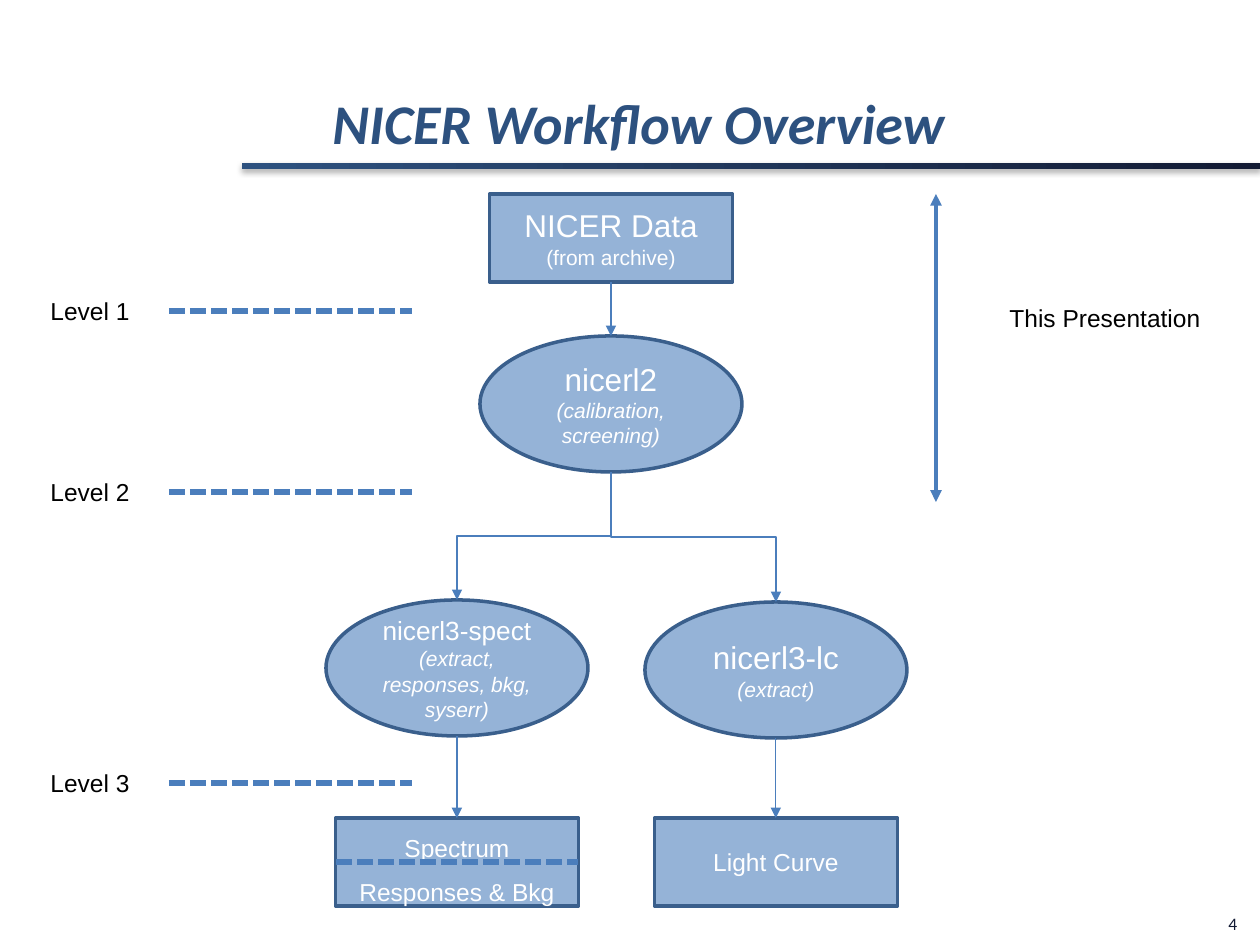
from lxml import etree
from pptx import Presentation, util as u
from pptx.dml.color import RGBColor
from pptx.enum import dml, shapes, text
from pptx.oxml import ns

EMU_PER_PX = 914400 / 126
NAVY = RGBColor(0x12, 0x1A, 0x33)
TITLE_BLUE = RGBColor(0x2D, 0x51, 0x7F)
NODE_FILL = RGBColor(0x95, 0xB3, 0xD7)
NODE_LINE = RGBColor(0x3A, 0x5F, 0x8C)
ARROW_BLUE = RGBColor(0x4B, 0x7E, 0xBC)
BLACK = RGBColor(0, 0, 0)
WHITE = RGBColor(0xFF, 0xFF, 0xFF)

RECTANGLE = shapes.MSO_SHAPE.RECTANGLE
OVAL = shapes.MSO_SHAPE.OVAL
STRAIGHT = shapes.MSO_CONNECTOR.STRAIGHT
ELBOW = shapes.MSO_CONNECTOR.ELBOW


def px(*lengths):
    return [u.Emu(round(length * EMU_PER_PX)) for length in lengths]


def child(parent, tag, **attributes):
    return etree.SubElement(parent, ns.qn(tag), attributes)


def write(paragraph, lines, color, font_name="Arial"):
    """Write (text, format) lines, parted by line breaks, in one paragraph."""
    for index, (words, formats) in enumerate(lines):
        if index:
            paragraph.add_line_break()
            size = lines[index - 1][1]["size"]
            child(paragraph._p[-1], "a:rPr", sz=str(size * 100))
        run = paragraph.add_run()
        run.text = words
        values = {"name": font_name, **formats, "size": u.Pt(formats["size"])}
        for name, value in values.items():
            setattr(run.font, name, value)
        run.font.color.rgb = color


def add_text(slide, box, words, color=BLACK, font_name="Arial", wrap=False,
             anchor=text.MSO_ANCHOR.TOP, **formats):
    frame = slide.shapes.add_textbox(*px(*box)).text_frame
    frame.word_wrap = wrap
    frame.vertical_anchor = anchor
    write(frame.paragraphs[0], [(words, {"size": 14, **formats})], color, font_name)


def add_node(slide, kind, center, top, lines, spacing=None):
    width, height = (243, 88) if kind == RECTANGLE else (262, 136)
    shape = slide.shapes.add_shape(kind, *px(center - width / 2, top, width, height))
    shape.shadow.inherit = False
    shape.fill.solid()
    shape.fill.fore_color.rgb = NODE_FILL
    shape.line.color.rgb = NODE_LINE
    shape.line.width = u.Pt(2)
    frame = shape.text_frame
    frame.word_wrap = True
    frame.vertical_anchor = text.MSO_ANCHOR.MIDDLE
    paragraph = frame.paragraphs[0]
    paragraph.alignment = text.PP_ALIGN.CENTER
    paragraph.line_spacing = spacing
    write(paragraph, lines, WHITE)


def add_line(slide, start, end, width, kind=STRAIGHT, dashed=False, arrows=()):
    connector = slide.shapes.add_connector(kind, *px(*start, *end))
    connector.line.color.rgb = ARROW_BLUE
    connector.line.width = u.Pt(width)
    if dashed:
        connector.line.dash_style = dml.MSO_LINE.SQUARE_DOT
    for arrow in arrows:
        child(connector.line._ln, arrow, type="triangle")
    child(connector.element.spPr, "a:effectLst")
    return connector


def add_down_elbow(slide, start, end):
    """Elbow that leaves downwards: a level elbow turned by a quarter."""
    (x1, y1), (x2, y2) = start, end
    middle_x, middle_y = (x1 + x2) / 2, (y1 + y2) / 2
    side = 1 if x2 < x1 else -1
    half_width, half_height = side * (y2 - y1) / 2, abs(x2 - x1) / 2
    connector = add_line(slide, (middle_x - half_width, middle_y - half_height),
                         (middle_x + half_width, middle_y + half_height),
                         0.75, ELBOW, arrows=["a:tailEnd"])
    connector.element.spPr.find(ns.qn("a:xfrm")).set(
        "rot", str((90 if side == 1 else 270) * 60000))


def build_header(slide, left, top, width):
    # Gradient rule with a soft shadow
    rule = slide.shapes.add_shape(RECTANGLE, *px(left, top + 89, width, 6))
    rule.fill.gradient()
    rule.fill.gradient_angle = 0
    for stop, color, position in zip(rule.fill.gradient_stops, (TITLE_BLUE, NAVY), (0, 1)):
        stop.color.rgb = color
        stop.position = position
    rule.line.fill.background()
    rule.shadow.inherit = False
    effects = rule.element.spPr.find(ns.qn("a:effectLst"))
    shadow = child(effects, "a:outerShdw", blurRad=str(u.Pt(3.1)), dist=str(u.Pt(1.8)),
                   dir="5400000", rotWithShape="0")
    child(child(shadow, "a:srgbClr", val="000000"), "a:alpha", val="35000")

    add_text(slide, (left + 78, top, 877, 88), "NICER Workflow Overview", TITLE_BLUE,
             "Calibri", True, text.MSO_ANCHOR.BOTTOM, size=32, bold=True, italic=True)


def build_workflow(slide, left, top):
    trunk, spectrum, curve = left + 285, left + 131, left + 450
    calibrate_top, spectrum_top, curve_top, product_top = (
        top + offset for offset in (142, 406, 408, 624))
    note = {"size": 12, "italic": True}

    # Processing steps and products
    add_node(slide, RECTANGLE, trunk, top,
             [("NICER Data", {"size": 18}), ("(from archive)", {"size": 12})])
    add_node(slide, OVAL, trunk, calibrate_top,
             [("nicerl2", {"size": 18}), ("(calibration, screening)", note)])
    add_node(slide, RECTANGLE, spectrum, product_top,
             [("Spectrum", {"size": 14}), ("Responses & Bkg", {"size": 14})], 1.5)
    add_node(slide, RECTANGLE, curve, product_top, [("Light Curve", {"size": 14})])
    add_node(slide, OVAL, spectrum, spectrum_top,
             [("nicerl3-spect", {"size": 15}), ("(extract, responses, bkg, syserr)", note)])
    add_node(slide, OVAL, curve, curve_top,
             [("nicerl3-lc", {"size": 18}), ("(extract)", note)])

    # Divider inside the spectrum product
    add_line(slide, (spectrum - 121, product_top + 44),
             (spectrum + 121, product_top + 44), 3, dashed=True)

    # Flow arrows
    add_line(slide, (trunk, top + 88), (trunk, calibrate_top), 0.75, arrows=["a:tailEnd"])
    for center, step_top in ((spectrum, spectrum_top), (curve, curve_top)):
        add_down_elbow(slide, (trunk, calibrate_top + 136), (center, step_top))
        add_down_elbow(slide, (center, step_top + 136), (center, product_top))


def build_level(slide, left, top, label):
    add_line(slide, (left + 131, top + 21), (left + 374, top + 21), 3, dashed=True)
    add_text(slide, (left, top, 105, 43), label)


def build_scope(slide, left, top, height):
    add_line(slide, (left, top), (left, top + height), 2.25,
             arrows=["a:headEnd", "a:tailEnd"])
    add_text(slide, (left + 61, top + 103, 218, 43), "This Presentation")


def main():
    presentation = Presentation()
    presentation.slide_width, presentation.slide_height = px(1260, 945)
    slide = presentation.slides.add_slide(presentation.slide_layouts[6])
    build_header(slide, 242, 74, 1018)
    build_workflow(slide, 326, 194)
    for number, top in enumerate((290, 471, 762), start=1):
        build_level(slide, 38, top, f"Level {number}")
    build_scope(slide, 936, 194, 308)
    add_text(slide, (1216, 907, 47, 34), "4", NAVY, "Calibri", size=10)
    presentation.save("out.pptx")


if __name__ == "__main__":
    main()
